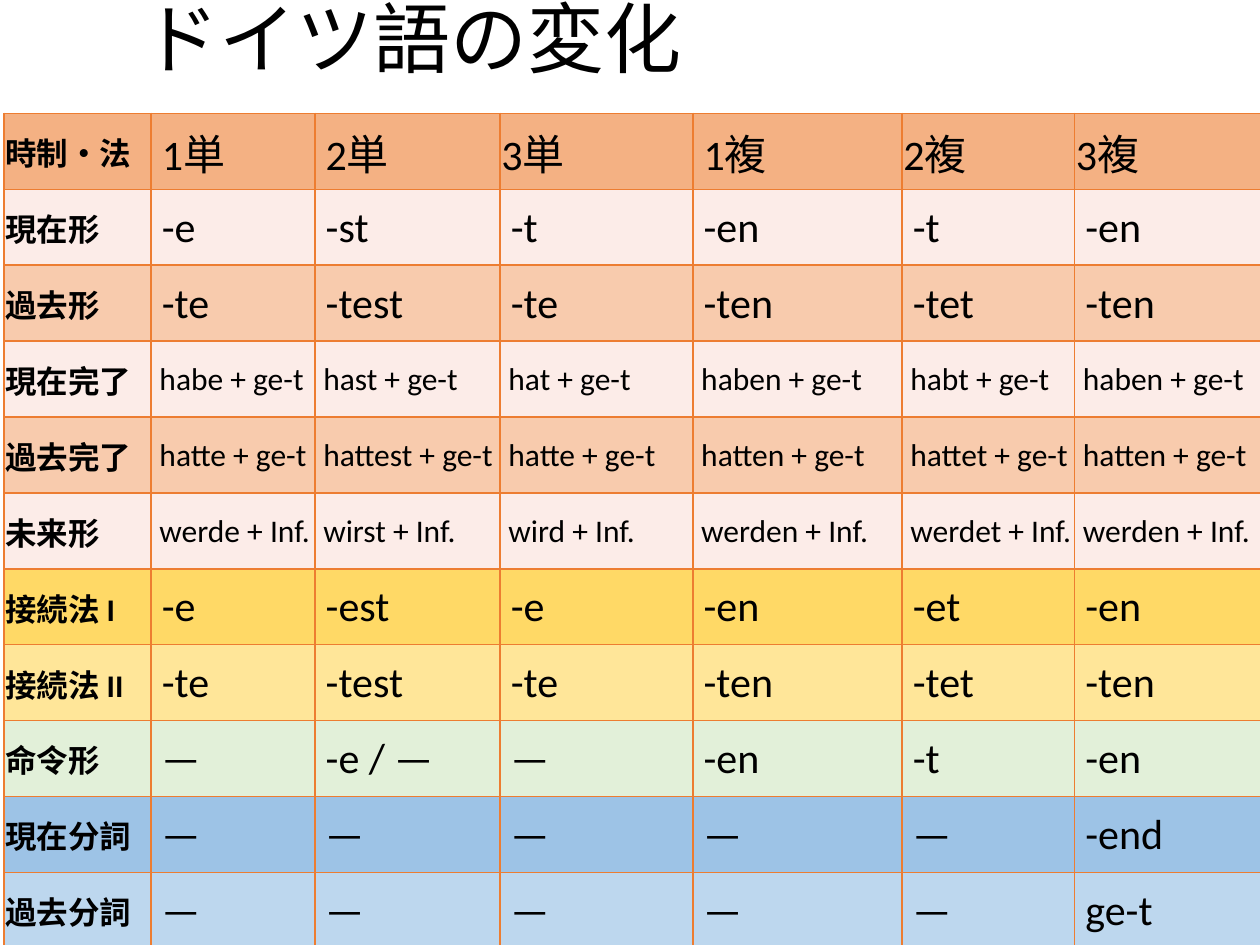
from lxml import etree
from pptx import Presentation
from pptx.dml.color import RGBColor
from pptx.enum import text
from pptx.oxml import ns
from pptx.util import Inches, Pt

BLACK = RGBColor(0x00, 0x00, 0x00)
ORANGE = RGBColor(0xED, 0x7D, 0x31)
HEADER = RGBColor(0xF4, 0xB1, 0x83)
PALE = RGBColor(0xFC, 0xEC, 0xE8)
PEACH = RGBColor(0xF8, 0xCB, 0xAD)
GOLD = RGBColor(0xFF, 0xD9, 0x66)
YELLOW = RGBColor(0xFF, 0xE6, 0x99)
GREEN = RGBColor(0xE2, 0xF0, 0xD9)
BLUE = RGBColor(0x9D, 0xC3, 0xE6)
LIGHT_BLUE = RGBColor(0xBD, 0xD7, 0xEE)

COLUMN_WIDTHS = [1.17, 1.3, 1.47, 1.53, 1.66, 1.37, 1.5]

# Row fill, size of the endings, label and one ending per person
CONJUGATION = [
    (HEADER, 24, ["時制・法", " 1単", " 2単", "3単", " 1複", "2複", "3複"]),
    (PALE, 24, ["現在形", " -e", " -st", " -t", " -en", " -t", " -en"]),
    (PEACH, 24, ["過去形", " -te", " -test", " -te", " -ten", " -tet", " -ten"]),
    (PALE, 18, ["現在完了", " habe + ge-t", " hast + ge-t", " hat + ge-t",
                " haben + ge-t", " habt + ge-t", " haben + ge-t"]),
    (PEACH, 18, ["過去完了", " hatte + ge-t", " hattest + ge-t", " hatte + ge-t",
                 " hatten + ge-t", " hattet + ge-t", " hatten + ge-t"]),
    (PALE, 18, ["未来形", " werde + Inf.", " wirst + Inf.", " wird + Inf.",
                " werden + Inf.", " werdet + Inf.", " werden + Inf."]),
    (GOLD, 24, ["接続法 I", " -e", " -est", " -e", " -en", " -et", " -en"]),
    (YELLOW, 24, ["接続法 II", " -te", " -test", " -te", " -ten", " -tet", " -ten"]),
    (GREEN, 24, ["命令形", " —", " -e / —", " —", " -en", " -t", " -en"]),
    (BLUE, 24, ["現在分詞"] + [" —"] * 5 + [" -end"]),
    (LIGHT_BLUE, 24, ["過去分詞"] + [" —"] * 5 + [" ge-t"]),
]


def style_text(para, font_name, size, bold=False):
    for span in para.runs:
        span.font.name = font_name
        span.font.size = Pt(size)
        span.font.bold = bold
        span.font.color.rgb = BLACK


def add_borders(cell, color, width):
    """Draw all four sides; lines must come before the fill in tcPr."""
    properties = cell._tc.get_or_add_tcPr()
    for index, side in enumerate(("lnL", "lnR", "lnT", "lnB")):
        line = etree.Element(ns.qn(f"a:{side}"), w=str(Pt(width)))
        fill = etree.SubElement(line, ns.qn("a:solidFill"))
        etree.SubElement(fill, ns.qn("a:srgbClr"), val=str(color))
        properties.insert(index, line)


def add_title(slide, left, top, width, height):
    box = slide.shapes.add_textbox(left, top, width, height)
    frame = box.text_frame
    frame.word_wrap = True
    frame.vertical_anchor = text.MSO_ANCHOR.MIDDLE
    frame.text = "ドイツ語の変化"
    para = frame.paragraphs[0]
    para.alignment = text.PP_ALIGN.CENTER
    para.line_spacing = 0.9
    style_text(para, "Arial", 44)


def fill_cell(cell, wording, fill, size, bold):
    cell.fill.solid()
    cell.fill.fore_color.rgb = fill
    cell.margin_left = cell.margin_right = cell.margin_top = Inches(0.01)
    cell.margin_bottom = 0
    cell.vertical_anchor = text.MSO_ANCHOR.MIDDLE
    cell.text = wording
    style_text(cell.text_frame.paragraphs[0], "Calibri", size, bold)
    add_borders(cell, ORANGE, 1)


def add_conjugation_table(slide, left, top, width, height):
    table = slide.shapes.add_table(
        len(CONJUGATION), len(COLUMN_WIDTHS), left, top, width, height).table
    for column, column_width in zip(table.columns, COLUMN_WIDTHS):
        column.width = Inches(column_width)
    for row, (fill, size, wordings) in zip(table.rows, CONJUGATION):
        for index, (cell, wording) in enumerate(zip(row.cells, wordings)):
            is_label = index == 0
            fill_cell(cell, wording, fill, 18 if is_label else size, is_label)


def main():
    deck = Presentation()
    deck.slide_width, deck.slide_height = Inches(10), Inches(7.5)
    slide = deck.slides.add_slide(deck.slide_layouts[6])
    add_title(slide, Inches(0.21), Inches(0), Inches(6.13), Inches(0.67))
    add_conjugation_table(
        slide, Inches(0.03), Inches(0.9), Inches(10), Inches(6.63))
    deck.save("out.pptx")


if __name__ == "__main__":
    main()
